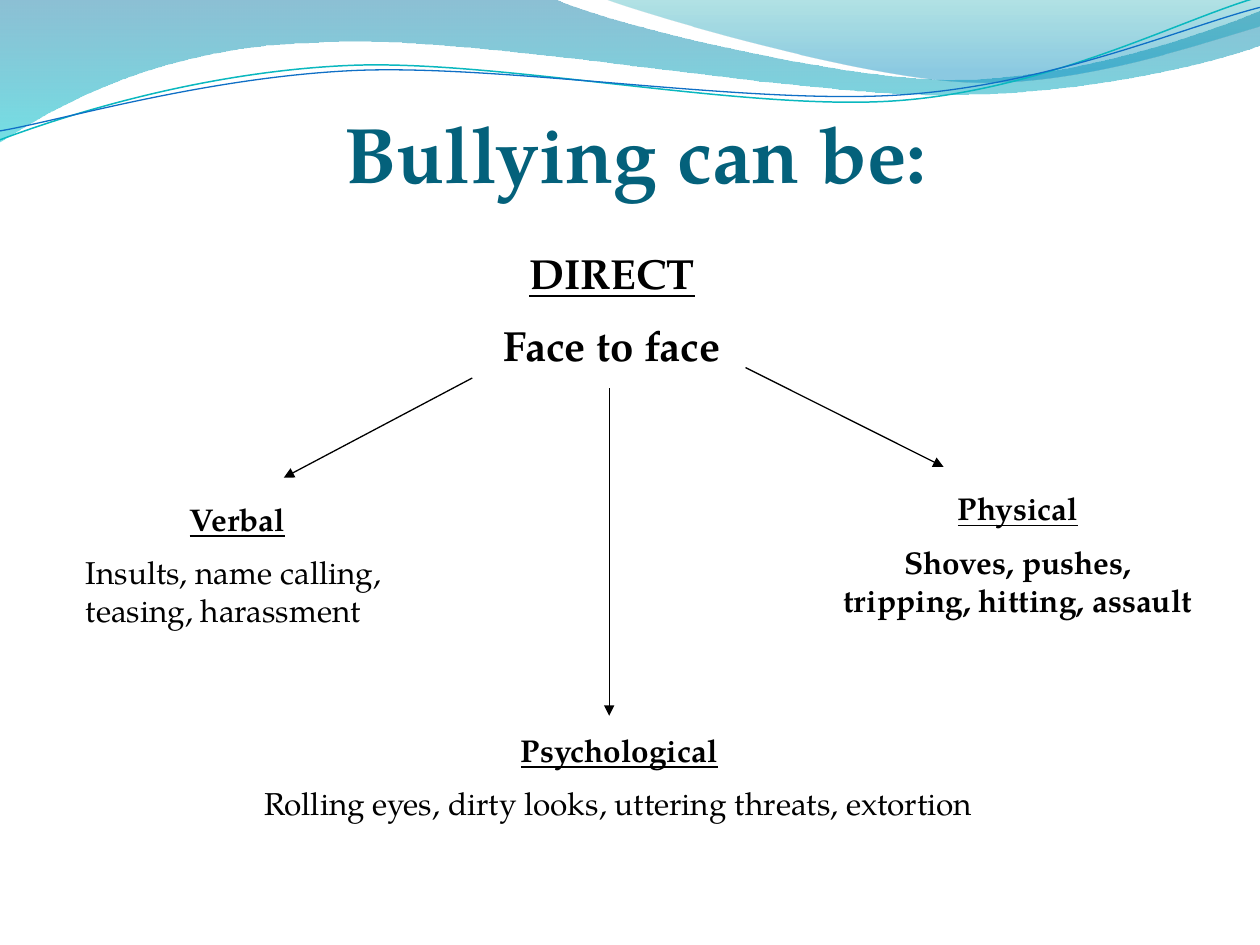
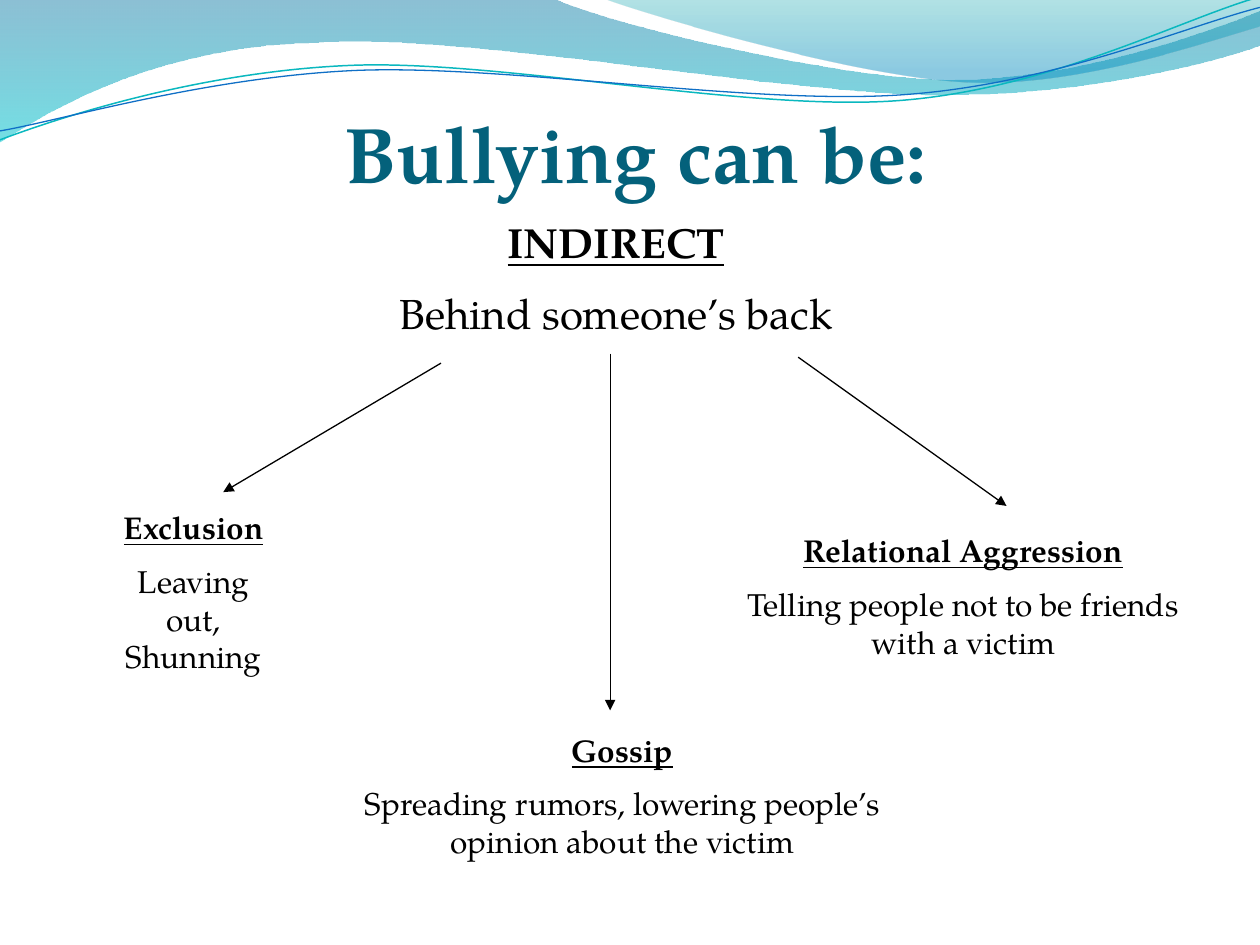
from dataclasses import dataclass
from itertools import chain
from typing import Optional

from lxml import etree
from pptx import Presentation
from pptx.dml.color import RGBColor
from pptx.enum.shapes import MSO_CONNECTOR
from pptx.enum.text import MSO_ANCHOR, MSO_AUTO_SIZE, PP_ALIGN
from pptx.oxml.ns import qn
from pptx.util import Cm, Pt

STRAIGHT = MSO_CONNECTOR.STRAIGHT
BOTTOM = MSO_ANCHOR.BOTTOM
FIT_TEXT = MSO_AUTO_SIZE.SHAPE_TO_FIT_TEXT
LEFT, CENTER = PP_ALIGN.LEFT, PP_ALIGN.CENTER

FONT = "TeX Gyre Pagella"
TITLE_COLOR, TEXT_COLOR = "04617B", "000000"
TITLE = "Bullying can be:"
HEADING_SIZE, TOPIC_SIZE = 24, 18

Point = tuple[float, float]
Segment = tuple[Point, ...]


@dataclass(frozen=True)
class GradientStop:
    position: float
    color: str
    opacity: int


@dataclass(frozen=True)
class Wave:
    """A segment of one point is a straight line, one of three a Bézier curve."""
    start: Point
    segments: tuple[Segment, ...]
    stops: tuple[GradientStop, ...] = ()
    line_color: str = ""
    line_width: float = 0


@dataclass(frozen=True)
class Topic:
    heading: str
    detail: str
    left: float
    top: float
    width: float
    height: float
    size: int = TOPIC_SIZE
    detail_bold: bool = False
    detail_alignment: PP_ALIGN = CENTER


@dataclass(frozen=True)
class Arrow:
    start: Point
    end: Point


@dataclass(frozen=True)
class Diagram:
    topics: tuple[Topic, ...]
    arrows: tuple[Arrow, ...]


# Header waves, in centimetres
WAVES = (
    Wave((0, 0), (
        ((11.18, -0.02),),
        ((12.09, 0.43), (16.87, 1.6), (19.25, 1.6)),
        ((21.67, 1.6), (24.33, 0.66), (25.4, 0.23)),
        ((25.42, 0.91),),
        ((24.97, 1.12), (22.1, 1.93), (18.95, 1.91)),
        ((15.8, 1.91), (9.7, 0.71), (6.53, 0.86)),
        ((3.28, 0.91), (1.17, 2.11), (-0.02, 2.87)),
    ), stops=(GradientStop(0, "0074A1", 45), GradientStop(1, "00C6CF", 55))),
    Wave((12.17, -0.02), (
        ((12.93, 0.28), (17.32, 1.57), (19.53, 1.65)),
        ((21.74, 1.75), (24.41, 0.81), (25.4, 0.53)),
        ((25.4, 0),),
    ), stops=(GradientStop(0, "00A1A9", 30), GradientStop(0.8, "008BBF", 45))),
    Wave((0, 2.82), (
        ((1.22, 2.36), (4.01, 1.45), (7.04, 1.32)),
        ((10.03, 1.19), (15.06, 2.26), (18.11, 2.03)),
        ((21.16, 1.8), (23.83, 0.38), (25.35, -0.05)),
    ), line_color="0AB8BF", line_width=0.85),
    Wave((0, 2.64), (
        ((1.19, 2.44), (4.17, 1.55), (7.19, 1.42)),
        ((10.24, 1.3), (15.16, 2.13), (18.21, 1.91)),
        ((21.23, 1.7), (23.9, 0.53), (25.4, 0.15)),
    ), line_color="0F6FC6", line_width=0.75),
)

DIAGRAMS = (
    Diagram(
        topics=(
            Topic("DIRECT", "Face to face", 9.73, 4.87, 5.21, 2.82,
                  size=HEADING_SIZE, detail_bold=True),
            Topic("Verbal", "Insults, name calling, teasing, harassment",
                  1.48, 9.95, 6.61, 2.92, detail_alignment=LEFT),
            Topic("Psychological",
                  "Rolling eyes, dirty looks, uttering threats, extortion",
                  5.08, 14.61, 14.81, 2.18, detail_alignment=LEFT),
            Topic("Physical", "Shoves, pushes, tripping, hitting, assault",
                  16.72, 9.74, 7.6, 3.71, detail_bold=True),
        ),
        arrows=(
            Arrow((9.52, 7.62), (5.72, 9.63)),
            Arrow((12.28, 7.83), (12.28, 14.43)),
            Arrow((15.03, 7.41), (19.02, 9.41)),
        ),
    ),
    Diagram(
        topics=(
            Topic("INDIRECT", "Behind someone’s back", 7.62, 4.24, 9.6, 2.82,
                  size=HEADING_SIZE),
            Topic("Exclusion", "Leaving out, Shunning", 1.91, 10.12, 3.99, 2.92),
            Topic("Gossip",
                  "Spreading rumors, lowering people’s opinion about the victim",
                  6.14, 14.61, 12.82, 2.95),
            Topic("Relational Aggression",
                  "Telling people not to be friends with a victim",
                  14.79, 10.59, 9.25, 2.92),
        ),
        arrows=(
            Arrow((8.89, 7.32), (4.5, 9.92)),
            Arrow((12.3, 7.13), (12.3, 14.32)),
            Arrow((16.09, 7.2), (20.29, 10.2)),
        ),
    ),
)


def rgb(color: str) -> RGBColor:
    return RGBColor.from_string(color)


def bend_segments(shape, segments: tuple[Segment, ...]) -> None:
    """Join the three straight steps of each curved segment into one curve."""
    steps = iter(list(shape._element.spPr.iter(qn("a:lnTo"))))
    for segment in segments:
        first, *others = [next(steps) for _ in segment]
        if others:
            first.tag = qn("a:cubicBezTo")
            for step in others:
                first.append(step[0])
                step.getparent().remove(step)


def fill_gradient(shape, stops: tuple[GradientStop, ...]) -> None:
    shape.fill.gradient()
    shape.fill.gradient_angle = 270
    for target, stop in zip(shape.fill.gradient_stops, stops):
        target.position = stop.position
        target.color.rgb = rgb(stop.color)
    for element, stop in zip(shape._element.spPr.iter(qn("a:srgbClr")), stops):
        etree.SubElement(element, qn("a:alpha"), val=str(stop.opacity * 1000))


def draw_wave(slide, wave: Wave) -> None:
    vertices = [(Cm(x), Cm(y)) for x, y in chain.from_iterable(wave.segments)]
    start_x, start_y = wave.start
    builder = slide.shapes.build_freeform(Cm(start_x), Cm(start_y), scale=1.0)
    builder.add_line_segments(vertices, close=bool(wave.stops))
    shape = builder.convert_to_shape()
    bend_segments(shape, wave.segments)
    shape.shadow.inherit = False
    if wave.stops:
        fill_gradient(shape, wave.stops)
        shape.line.fill.background()
    else:
        shape.fill.background()
        shape.line.color.rgb = rgb(wave.line_color)
        shape.line.width = Pt(wave.line_width)


def add_text_frame(slide, left: float, top: float, width: float, height: float):
    box = slide.shapes.add_textbox(Cm(left), Cm(top), Cm(width), Cm(height))
    box.text_frame.word_wrap = True
    return box.text_frame


def write_paragraph(paragraph, text: str, size: int, color: str = TEXT_COLOR,
                    bold: bool = True, underline: Optional[bool] = None,
                    alignment: PP_ALIGN = CENTER) -> None:
    paragraph.text = text
    paragraph.alignment = alignment
    font = paragraph.font
    font.name, font.size, font.bold = FONT, Pt(size), bold
    font.underline = underline
    font.color.rgb = rgb(color)


def draw_title(slide) -> None:
    frame = add_text_frame(slide, 6.56, 1.9, 12.5, 2.11)
    frame.vertical_anchor = BOTTOM
    frame.margin_left = frame.margin_right = frame.margin_bottom = 0
    write_paragraph(frame.paragraphs[0], TITLE, 45, TITLE_COLOR)


def draw_topic(slide, topic: Topic) -> None:
    frame = add_text_frame(slide, topic.left, topic.top, topic.width, topic.height)
    frame.auto_size = FIT_TEXT
    write_paragraph(frame.paragraphs[0], topic.heading, topic.size, underline=True)
    detail = frame.add_paragraph()
    write_paragraph(detail, topic.detail, topic.size, bold=topic.detail_bold,
                    alignment=topic.detail_alignment)
    detail.space_before = Pt(topic.size / 2)


def draw_arrow(slide, arrow: Arrow) -> None:
    ends = [Cm(value) for value in (*arrow.start, *arrow.end)]
    connector = slide.shapes.add_connector(STRAIGHT, *ends)
    connector.line.color.rgb = rgb(TEXT_COLOR)
    connector.line.width = Pt(0.75)
    properties = connector._element.spPr
    etree.SubElement(properties.find(qn("a:ln")), qn("a:tailEnd"), type="triangle")
    etree.SubElement(properties, qn("a:effectLst"))


def main() -> None:
    presentation = Presentation()
    presentation.slide_width, presentation.slide_height = Cm(25.4), Cm(19.05)
    blank_layout = presentation.slide_layouts[6]
    for diagram in DIAGRAMS:
        slide = presentation.slides.add_slide(blank_layout)
        # Shared header
        for wave in WAVES:
            draw_wave(slide, wave)
        draw_title(slide)
        # Topics and the arrows leading to them
        for arrow in diagram.arrows:
            draw_arrow(slide, arrow)
        for topic in diagram.topics:
            draw_topic(slide, topic)
    presentation.save("out.pptx")


if __name__ == "__main__":
    main()
